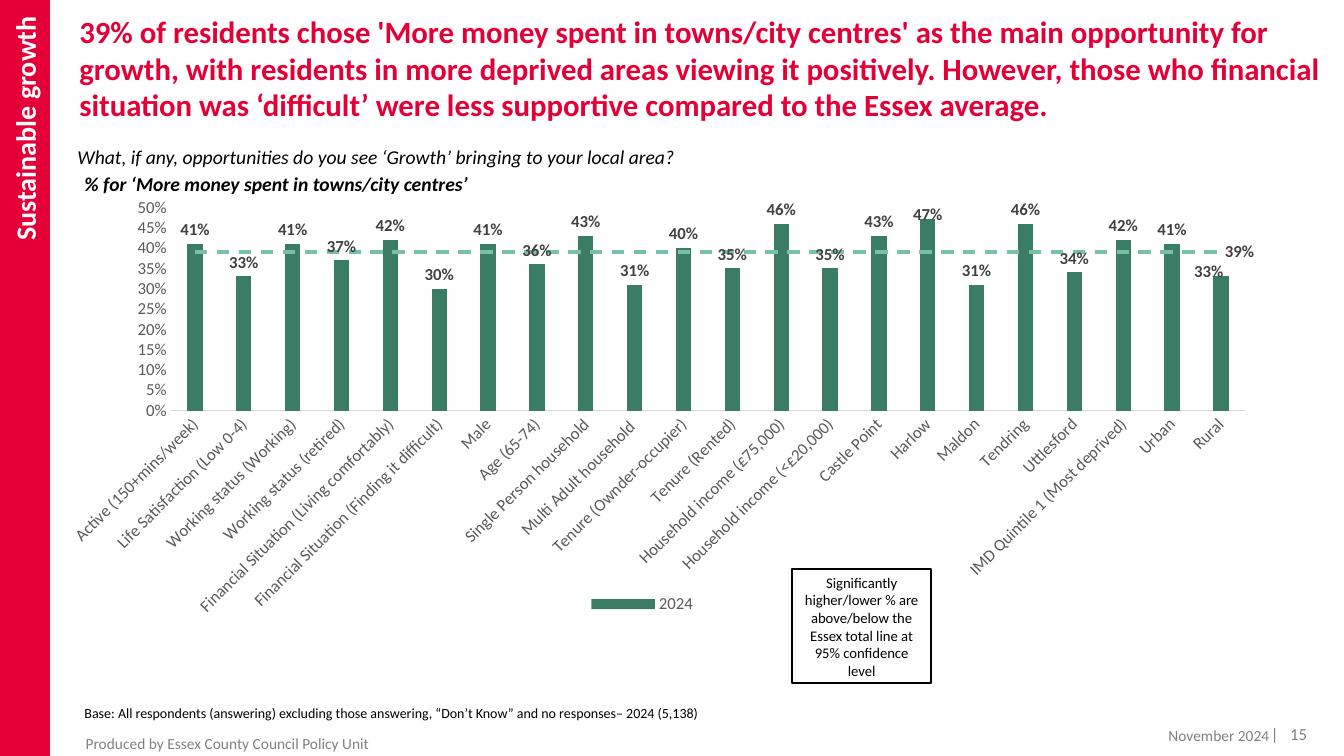
from lxml import etree
from pptx import Presentation
from pptx.chart.data import CategoryChartData
from pptx.dml.color import RGBColor
from pptx.enum.chart import XL_CHART_TYPE, XL_LABEL_POSITION, XL_LEGEND_POSITION, XL_MARKER_STYLE, XL_TICK_MARK
from pptx.enum.dml import MSO_LINE
from pptx.enum.shapes import MSO_SHAPE
from pptx.enum.text import MSO_ANCHOR, MSO_AUTO_SIZE, PP_ALIGN
from pptx.oxml.ns import qn
from pptx.util import Cm, Pt

LEFT, CENTER, RIGHT = PP_ALIGN.LEFT, PP_ALIGN.CENTER, PP_ALIGN.RIGHT
TOP, MIDDLE = MSO_ANCHOR.TOP, MSO_ANCHOR.MIDDLE
ABOVE_BAR, BESIDE_LINE = XL_LABEL_POSITION.OUTSIDE_END, XL_LABEL_POSITION.RIGHT
NO_TICK = XL_TICK_MARK.NONE
FONT = "Calibri"
RED = RGBColor(0xE4, 0x00, 0x37)
GREEN = RGBColor(0x3A, 0x7D, 0x64)
MINT = RGBColor(0x78, 0xC0, 0xA6)
BLACK = RGBColor(0, 0, 0)
WHITE = RGBColor(0xFF, 0xFF, 0xFF)
GREY = RGBColor(0x80, 0x80, 0x80)
AXIS_GREY = RGBColor(0x59, 0x59, 0x59)
LABEL_GREY = RGBColor(0x40, 0x40, 0x40)
LINE_GREY = RGBColor(0xD9, 0xD9, 0xD9)

# Content
HEADLINE = (
    "39% of residents chose 'More money spent in towns/city centres' as the main opportunity "
    "for growth, with residents in more deprived areas viewing it positively. However, those who "
    "financial situation was ‘difficult’ were less supportive compared to the Essex average.")
SECTION = "Sustainable growth "
NOTE = "Significantly higher/lower % are above/below the Essex total line at 95% confidence level"
# text, (left, top, width, height) in cm, size, bold, italic
CAPTIONS = [
    ("What, if any, opportunities do you see ‘Growth’ bringing to your local area?",
     (1.7, 3.51, 30.66, 0.86), 14, False, True),
    ("% for ‘More money spent in towns/city centres’", (1.88, 4.19, 15.27, 0.86), 14, True, True),
    ("Base: All respondents (answering) excluding those answering, “Don’t Know” and no "
     "responses– 2024 (5,138)", (1.88, 17.63, 17.78, 0.69), 10, False, False),
]
PRODUCER = "Produced by Essex County Council Policy Unit"
DATE = "November 2024"
PAGE = "15"
RESULTS = {
    "Active (150+mins/week)": 0.41, "Life Satisfaction (Low 0-4)": 0.33,
    "Working status (Working)": 0.41, "Working status (retired)": 0.37,
    "Financial Situation (Living comfortably)": 0.42,
    "Financial Situation (Finding it difficult)": 0.30,
    "Male": 0.41, "Age (65-74)": 0.36,
    "Single Person household": 0.43, "Multi Adult household ": 0.31,
    "Tenure (Ownder-occupier)": 0.40, "Tenure (Rented)": 0.35,
    "Household income (£75,000)": 0.46, "Household income (<£20,000)": 0.35,
    "Castle Point": 0.43, "Harlow": 0.47, "Maldon": 0.31, "Tendring": 0.46, "Uttlesford": 0.34,
    "IMD Quintile 1 (Most deprived)": 0.42, "Urban": 0.41, "Rural": 0.33,
}
ESSEX_TOTAL = 0.39
# Bar labels nudged off their default place: category, shift as share of the chart
NUDGED_LABELS = [("Harlow", 0, 0.02), ("Rural", -0.01, 0.02)]


def style(font, size, color, bold=False, italic=False):
    font.name, font.size, font.bold, font.italic = FONT, Pt(size), bold, italic
    font.color.rgb = color


def add_run(paragraph, text, *look):
    run = paragraph.add_run()
    run.text = text
    style(run.font, *look)
    return run


def write(shape, text, *look, align=LEFT, anchor=TOP, insets=(0.25, 0.13, 0.25, 0.13)):
    frame = shape.text_frame
    frame.word_wrap = True
    frame.auto_size = MSO_AUTO_SIZE.NONE
    frame.vertical_anchor = anchor
    (frame.margin_left, frame.margin_top,
     frame.margin_right, frame.margin_bottom) = map(Cm, insets)
    paragraph = frame.paragraphs[0]
    paragraph.alignment = align
    add_run(paragraph, text, *look)
    return paragraph


def add_text(box, *args, **options):
    return write(slide.shapes.add_textbox(*map(Cm, box)), *args, **options)


def add_rectangle(box, line_color, line_width):
    rectangle = slide.shapes.add_shape(MSO_SHAPE.RECTANGLE, *map(Cm, box))
    rectangle.shadow.inherit = False
    rectangle.line.color.rgb = line_color
    rectangle.line.width = Pt(line_width)
    return rectangle


def child(parent, tag, val):
    etree.SubElement(parent, qn(tag)).set("val", str(val))


def place(parent, index, **values):
    """Give a chart part a manual layout as its child number index."""
    for old in parent.findall(qn("c:layout")):
        parent.remove(old)
    layout = etree.Element(qn("c:layout"))
    manual = etree.SubElement(layout, qn("c:manualLayout"))
    for tag, val in values.items():
        child(manual, "c:" + tag, val)
    parent.insert(index, layout)


def format_label(label, position):
    style(label.font, 12, LABEL_GREY, True)
    label.position = position


prs = Presentation()
prs.slide_width, prs.slide_height = Cm(33.87), Cm(19.05)
slide = prs.slides.add_slide(prs.slide_layouts[5])

# Headline and section band
headline = slide.shapes.title
headline.left, headline.top, headline.width, headline.height = map(Cm, (1.75, 0.18, 31.9, 2.51))
write(headline, HEADLINE, 22, RED, True, insets=(0.25, 0.13, 0.25, 0))
band = add_rectangle((0, 0, 1.24, 19.05), RED, 1)
band.fill.solid()
band.fill.fore_color.rgb = RED
write(band, SECTION, 20, WHITE, True, align=RIGHT, anchor=MIDDLE, insets=(0.25, 0.25, 0.25, 0.13))
band.element.txBody.bodyPr.set("vert", "vert270")

# Chart
data = CategoryChartData(number_format="0%")
data.categories = list(RESULTS)
data.add_series("2024", RESULTS.values())
data.add_series("Essex Total", [ESSEX_TOTAL] * len(RESULTS))
chart = slide.shapes.add_chart(
    XL_CHART_TYPE.COLUMN_CLUSTERED, *map(Cm, (1.22, 4.75, 30.78, 11.91)), data).chart
style(chart.font, 10, BLACK)
chart.has_title = False
chart.plots[0].gap_width = 219
chart.plots[0].vary_by_categories = False

# The second series becomes a line on the same axes
bar_chart = chart.element.find(".//" + qn("c:barChart"))
total_ser = bar_chart.findall(qn("c:ser"))[1]
for bar_only in total_ser.findall(qn("c:invertIfNegative")):
    total_ser.remove(bar_only)
line_chart = bar_chart.makeelement(qn("c:lineChart"))
bar_chart.addnext(line_chart)
child(line_chart, "c:grouping", "standard")
child(line_chart, "c:varyColors", 0)
line_chart.append(total_ser)
child(line_chart, "c:marker", 1)
for axis_id in bar_chart.findall(qn("c:axId")):
    child(line_chart, "c:axId", axis_id.get("val"))

# Series and their labels
bars, total = chart.plots[0].series[0], chart.plots[1].series[0]
bars.format.fill.solid()
bars.format.fill.fore_color.rgb = GREEN
bars.data_labels.show_value = True
format_label(bars.data_labels, ABOVE_BAR)
for name, dx, dy in NUDGED_LABELS:
    index = list(RESULTS).index(name)
    format_label(bars.points[index].data_label, ABOVE_BAR)
    label_index = bar_chart.find(f".//{qn('c:dLbl')}/{qn('c:idx')}[@val='{index}']")
    place(label_index.getparent(), 1, x=dx, y=dy)
total.smooth = False
total.marker.style = XL_MARKER_STYLE.NONE
total.format.line.color.rgb = MINT
total.format.line.width = Pt(2.25)
total.format.line.dash_style = MSO_LINE.DASH
total.data_labels.show_value = False
format_label(total.points[len(RESULTS) - 1].data_label, BESIDE_LINE)

# Axes, plot area and legend
groups, shares = chart.category_axis, chart.value_axis
for axis in (groups, shares):
    axis.has_major_gridlines = False
    axis.major_tick_mark = axis.minor_tick_mark = NO_TICK
    style(axis.tick_labels.font, 12, AXIS_GREY)
groups.format.line.color.rgb = LINE_GREY
groups.format.line.width = Pt(0.75)
groups.tick_labels.font._element.getparent().getparent().getparent().find(qn("a:bodyPr")).set("rot", "-2700000")
shares.format.line.fill.background()
shares.minimum_scale, shares.maximum_scale, shares.major_unit = 0, 0.5, 0.05
shares.tick_labels.number_format = "0%"
shares.tick_labels.number_format_is_linked = False
place(bar_chart.getparent(), 0, layoutTarget="inner", xMode="edge", yMode="edge",
      x=0.1, y=0.04, w=0.88, h=0.43)
chart.has_legend = True
chart.legend.position = XL_LEGEND_POSITION.BOTTOM
chart.legend.include_in_layout = False
style(chart.legend.font, 12, AXIS_GREY)
legend = chart.element.find(".//" + qn("c:legend"))
total_entry = etree.Element(qn("c:legendEntry"))
child(total_entry, "c:idx", 1)
child(total_entry, "c:delete", 1)
legend.insert(1, total_entry)
place(legend, 2, xMode="edge", yMode="edge", x=0.44, y=0.85)

# Significance note, captions and footer
note = add_rectangle((19.96, 14.35, 3.51, 2.87), BLACK, 1.5)
note.fill.background()
write(note, NOTE, 10.5, BLACK, align=CENTER, anchor=MIDDLE)
for text, box, size, bold, italic in CAPTIONS:
    add_text(box, text, size, BLACK, bold, italic)
add_text((1.93, 18.54, 16.61, 0.38), PRODUCER, 11, GREY, anchor=MIDDLE, insets=(0.23, 0.13, 0.25, 0.13))
add_text((26.14, 18.16, 6.1, 0.38), DATE, 11, GREY, align=RIGHT)
page = add_text((30.78, 18.31, 2.16, 0.38), "|", 12, GREY,
                align=RIGHT, anchor=MIDDLE, insets=(0.25, 0.13, 0, 0.13))
gap = add_run(page, " ", 12, GREY)
gap.font._element.set("spc", "540")
add_run(page, PAGE, 12, GREY)
prs.save("out.pptx")
